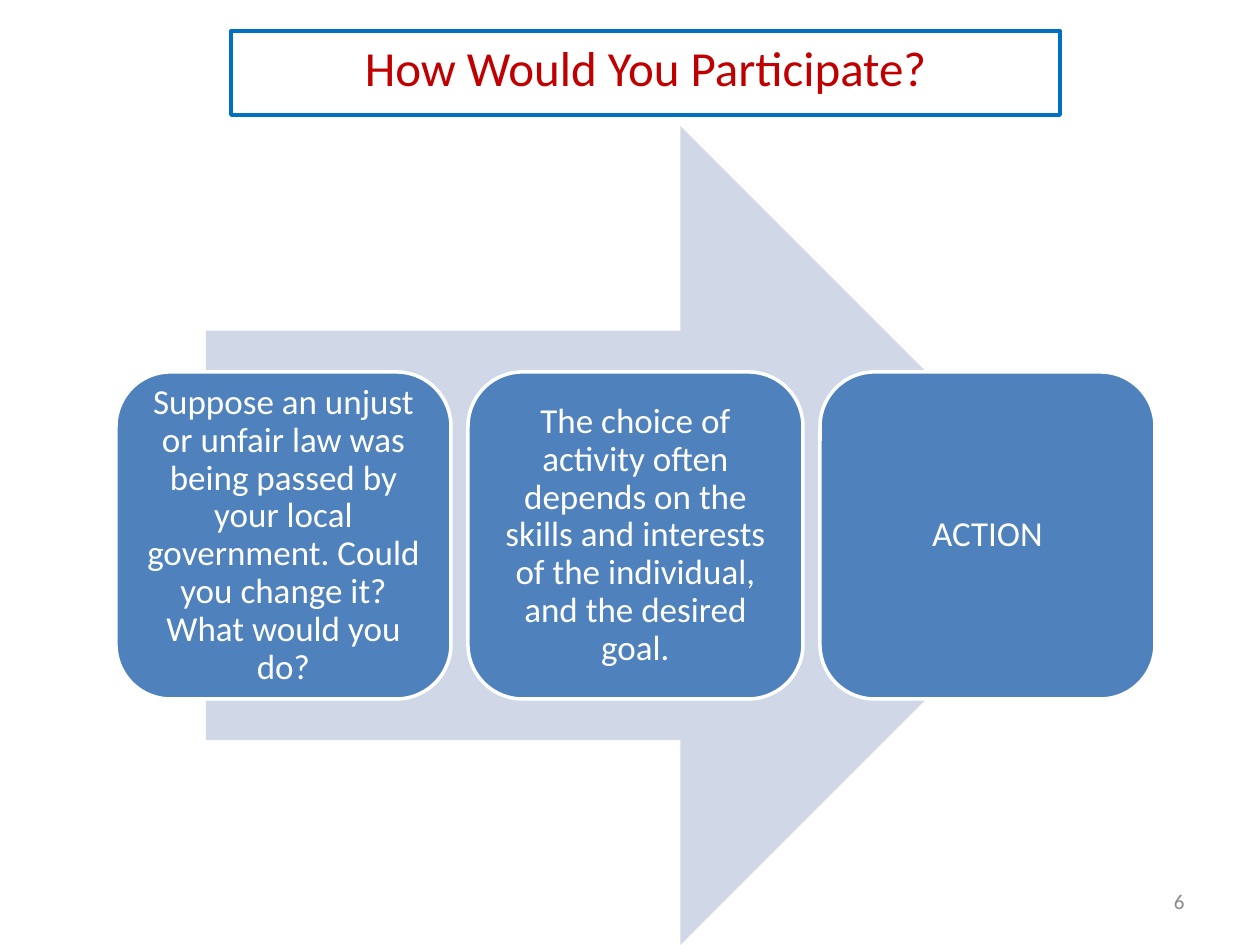
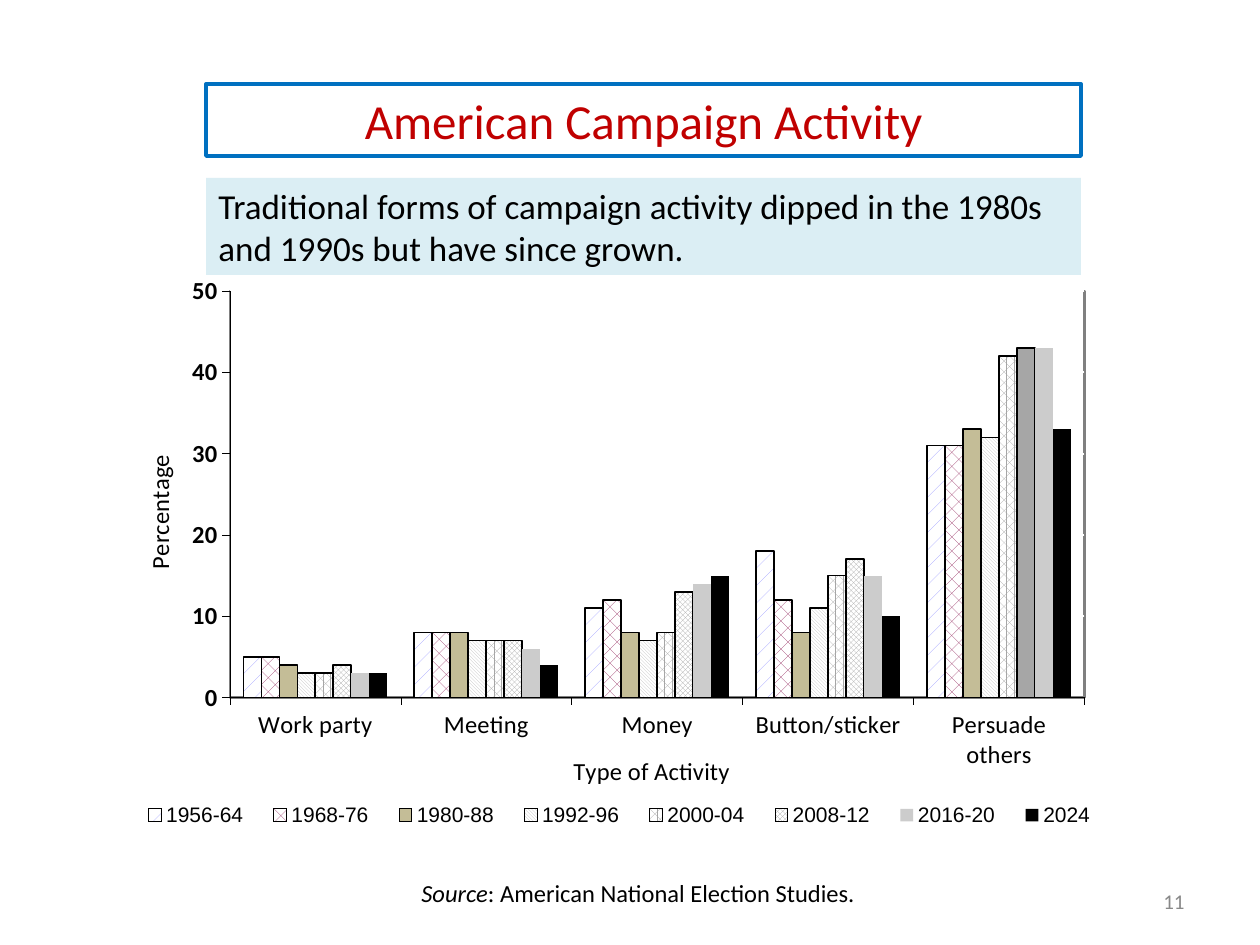
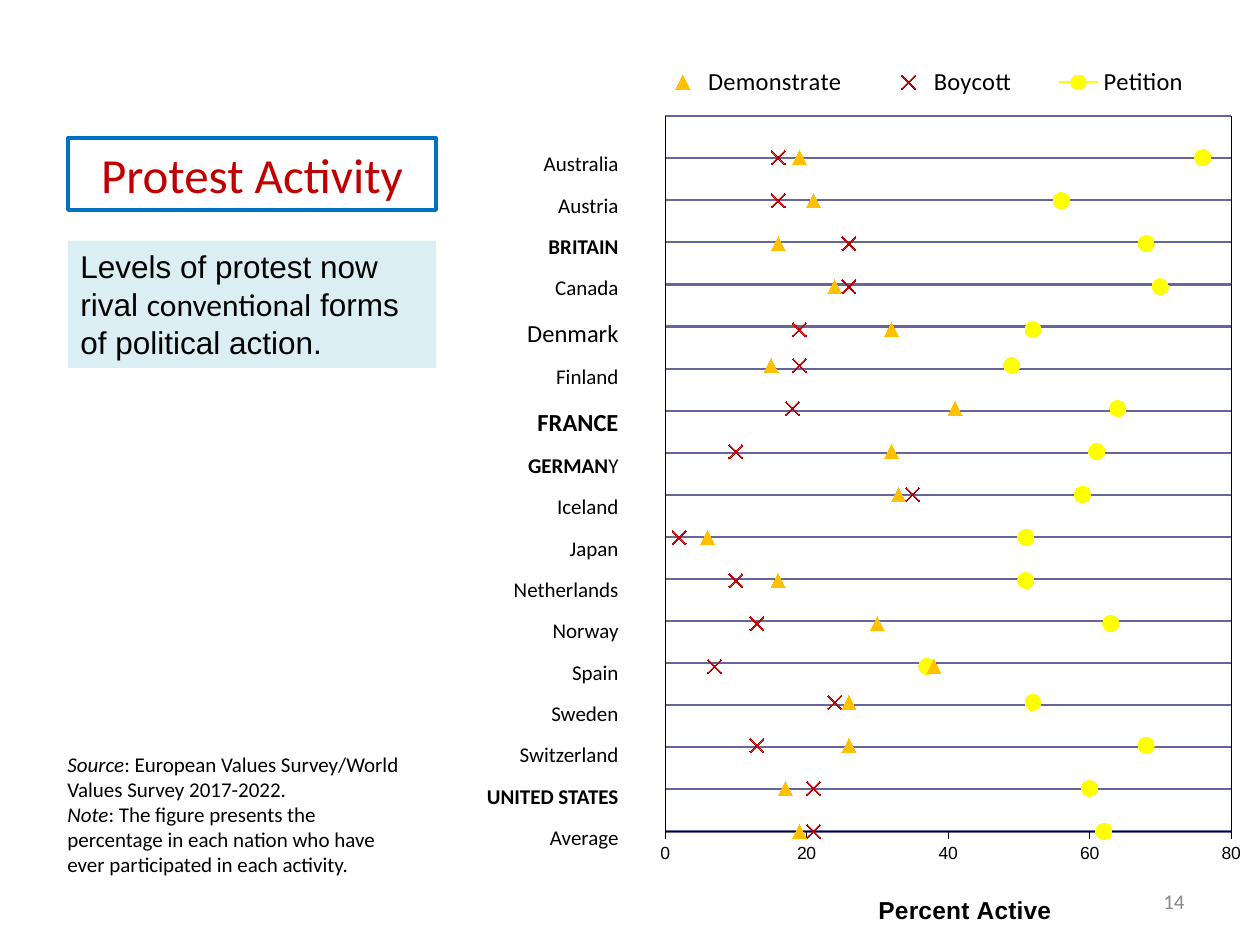
from pptx import Presentation
from pptx.chart.data import CategoryChartData, XyChartData
from pptx.dml.color import RGBColor
from pptx.enum.chart import XL_CHART_TYPE as ChartType, XL_LEGEND_POSITION as LegendPosition
from pptx.enum.chart import XL_MARKER_STYLE as Marker, XL_TICK_LABEL_POSITION as TickLabels
from pptx.enum.chart import XL_TICK_MARK as TickMark
from pptx.enum.dml import MSO_PATTERN as Pattern
from pptx.enum.shapes import MSO_SHAPE as Shape
from pptx.enum.text import MSO_ANCHOR as Anchor, MSO_AUTO_SIZE as AutoSize, PP_ALIGN as Align
from pptx.oxml import parse_xml
from pptx.oxml.ns import nsdecls, qn
from pptx.util import Emu, Inches, Pt

PX = Emu(7257)  # 126 px to the inch
RED = RGBColor(0xC0, 0x00, 0x00)
FRAME_BLUE = RGBColor(0x00, 0x70, 0xC0)
CARD_BLUE = RGBColor(0x4F, 0x81, 0xBD)
ARROW_BLUE = RGBColor(0xD0, 0xD8, 0xE8)
CALLOUT_BLUE = RGBColor(0xDB, 0xEE, 0xF4)
GRID_BLUE = RGBColor(0x66, 0x66, 0x99)
NUMBER_GRAY = RGBColor(0x89, 0x89, 0x89)
BORDER_GRAY = RGBColor(0x80, 0x80, 0x80)
LIGHT_GRAY = RGBColor(0xCC, 0xCC, 0xCC)
MID_GRAY = RGBColor(0xA6, 0xA6, 0xA6)
PALE_GRAY = RGBColor(0xBF, 0xBF, 0xBF)
LILAC = RGBColor(0x99, 0x99, 0xFF)
PLUM = RGBColor(0x99, 0x33, 0x66)
TAN = RGBColor(0xC4, 0xBD, 0x97)
ORANGE = RGBColor(0xFF, 0xC0, 0x00)
YELLOW = RGBColor(0xFF, 0xFF, 0x00)
BLACK = RGBColor(0x00, 0x00, 0x00)
WHITE = RGBColor(0xFF, 0xFF, 0xFF)


def add_text(slide, frame, paragraphs, size, color=BLACK, fill=None, align=Align.LEFT):
    """Add a text box; each paragraph is a list of (text, font settings) runs."""
    box = slide.shapes.add_textbox(*(length * PX for length in frame))
    if fill is not None:
        box.fill.solid()
        box.fill.fore_color.rgb = fill
    text_frame = box.text_frame
    text_frame.word_wrap = True
    for index, runs in enumerate(paragraphs):
        paragraph = text_frame.add_paragraph() if index else text_frame.paragraphs[0]
        paragraph.alignment = align
        paragraph.font.size = Pt(size)
        paragraph.font.name = "Calibri"
        paragraph.font.color.rgb = color
        for text, settings in runs:
            run = paragraph.add_run()
            run.text = text
            for name, value in settings.items():
                setattr(run.font, name, value)
    return text_frame


def place_part(chart, part, **fractions):
    """Fix a chart part at fractions (x, y, w, h) of the chart frame."""
    element = chart.element.xpath(part)[0]
    for old_layout in element.findall(qn("c:layout")):
        element.remove(old_layout)
    target = '<c:layoutTarget val="inner"/>' if part.endswith("plotArea") else ""
    modes = "".join(f'<c:{key}Mode val="edge"/>' for key in "xy")
    values = "".join(f'<c:{key} val="{value}"/>' for key, value in fractions.items())
    layout = parse_xml(
        f'<c:layout {nsdecls("c")}><c:manualLayout>{target}{modes}{values}'
        "</c:manualLayout></c:layout>")
    before = element.xpath("c:tx | c:legendPos")
    if before:
        before[0].addnext(layout)
    else:
        element.insert(0, layout)


presentation = Presentation()
presentation.slide_width, presentation.slide_height = Inches(10), Inches(7.5)

# Shared parts: framed title and slide number
slides = []
for title_text, title_frame, number in [
    ("How Would You Participate?", (231, 31, 829, 84), "6"),
    ("American Campaign Activity", (206, 84, 875, 72), "11"),
    ("Protest Activity", (68, 138, 368, 72), "14"),
]:
    slide = presentation.slides.add_slide(presentation.slide_layouts[5])
    title = slide.shapes.title
    title.left, title.top, title.width, title.height = (length * PX for length in title_frame)
    title.line.color.rgb = FRAME_BLUE
    title.line.width = Pt(2.25)
    title.text_frame.text = title_text
    title.text_frame.auto_size = AutoSize.NONE
    title.text_frame.vertical_anchor = Anchor.TOP
    paragraph = title.text_frame.paragraphs[0]
    paragraph.alignment = Align.CENTER
    paragraph.font.size = Pt(28)
    paragraph.font.name = "Calibri"
    paragraph.font.color.rgb = RED
    number_frame = add_text(slide, (903, 876, 294, 50), [[(number, {})]], 12,
                            NUMBER_GRAY, align=Align.RIGHT)
    number_frame.vertical_anchor = Anchor.MIDDLE
    slides.append(slide)
participate, campaign, protest = slides

# Participation: arrow behind three cards
arrow = participate.shapes.add_shape(
    Shape.RIGHT_ARROW, *(length * PX for length in (206, 126, 884, 819)))
arrow.shadow.inherit = False
arrow.fill.solid()
arrow.fill.fore_color.rgb = ARROW_BLUE
arrow.line.fill.background()

for index, text in enumerate([
    "Suppose an unjust or unfair law was being passed by your local government. "
    "Could you change it? What would you do?",
    "The choice of activity often depends on the skills and interests of the "
    "individual, and the desired goal.",
    "ACTION",
]):
    card = participate.shapes.add_shape(
        Shape.ROUNDED_RECTANGLE,
        *(length * PX for length in (116 + 352 * index, 372, 335, 327)))
    card.shadow.inherit = False
    card.fill.solid()
    card.fill.fore_color.rgb = CARD_BLUE
    card.line.color.rgb = WHITE
    card.line.width = Pt(2)
    text_frame = card.text_frame
    text_frame.word_wrap = True
    text_frame.vertical_anchor = Anchor.MIDDLE
    text_frame.margin_left = text_frame.margin_right = 10 * PX
    text_frame.margin_top = text_frame.margin_bottom = 10 * PX
    text_frame.text = text
    paragraph = text_frame.paragraphs[0]
    paragraph.alignment = Align.CENTER
    paragraph.line_spacing = 0.9
    paragraph.font.size = Pt(20)
    paragraph.font.name = "Calibri"
    paragraph.font.color.rgb = WHITE

# Campaign activity: callout and source
add_text(campaign, (206, 178, 875, 97), [[
    ("Traditional forms of campaign activity dipped in the 1980s and 1990s "
     "but have since grown.", {})]], 20, fill=CALLOUT_BLUE)
add_text(campaign, (409, 872, 651, 43), [[
    ("Source", {"italic": True}), (": American National Election Studies.", {})]], 14)

# Campaign activity: name, values, pattern, colour, outlined
periods = [
    ("1956-64", (5, 8, 11, 18, 31), Pattern.PERCENT_5, LILAC, True),
    ("1968-76", (5, 8, 12, 12, 31), Pattern.PERCENT_25, PLUM, True),
    ("1980-88", (4, 8, 8, 8, 33), None, TAN, True),
    ("1992-96", (3, 7, 7, 11, 32), Pattern.DARK_DOWNWARD_DIAGONAL, PALE_GRAY, True),
    ("2000-04", (3, 7, 8, 15, 42), Pattern.PERCENT_60, MID_GRAY, True),
    ("2008-12", (4, 7, 13, 17, 43), Pattern.TRELLIS, MID_GRAY, True),
    ("2016-20", (3, 6, 14, 15, 43), None, LIGHT_GRAY, False),
    ("2024", (3, 4, 15, 10, 33), None, BLACK, False),
]
campaign_data = CategoryChartData()
campaign_data.categories = ["Work party", "Meeting", "Money", "Button/sticker", "Persuade others"]
for name, values, *_ in periods:
    campaign_data.add_series(name, values)
campaign_chart = campaign.shapes.add_chart(
    ChartType.COLUMN_CLUSTERED, *(length * PX for length in (125, 258, 1009, 614)),
    campaign_data).chart
plot = campaign_chart.plots[0]
plot.gap_width = 150
plot.overlap = 0
plot.vary_by_categories = False
for series, (_, _, pattern, color, outlined) in zip(plot.series, periods):
    fill = series.format.fill
    if pattern is None:
        fill.solid()
    else:
        fill.patterned()
        fill.pattern = pattern
        fill.back_color.rgb = WHITE
    fill.fore_color.rgb = color
    if outlined:
        series.format.line.color.rgb = BLACK
        series.format.line.width = Pt(0.98)
persuade_2008 = plot.series[5].points[4].format
persuade_2008.fill.solid()
persuade_2008.fill.fore_color.rgb = MID_GRAY
persuade_2008.line.color.rgb = BLACK
persuade_2008.line.width = Pt(0.98)
campaign_chart.value_axis.minimum_scale = 0
campaign_chart.value_axis.maximum_scale = 50
campaign_chart.value_axis.major_unit = 10

# Protest activity: bold label part, plain label part, label size, percentages
nations = [
    ("", "Australia", 12, (19, 16, 76)),
    ("", "Austria", 12, (21, 16, 56)),
    ("BRITAIN", "", 12, (16, 26, 68)),
    ("", "Canada", 12, (24, 26, 70)),
    ("", "Denmark", 14, (32, 19, 52)),
    ("", "Finland", 12, (15, 19, 49)),
    ("FRANCE", "", 14, (41, 18, 64)),
    ("GERMAN", "Y", 12, (32, 10, 61)),
    ("", "Iceland", 12, (33, 35, 59)),
    ("", "Japan", 12, (6, 2, 51)),
    ("", "Netherlands", 12, (16, 10, 51)),
    ("", "Norway", 12, (30, 13, 63)),
    ("", "Spain", 12, (38, 7, 37)),
    ("", "Sweden", 12, (26, 24, 52)),
    ("", "Switzerland", 12, (26, 13, 68)),
    ("UNITED STATES", "", 12, (17, 21, 60)),
    ("", "Average", 12, (19, 21, 62)),
]
activities = [
    ("Demonstrate", Marker.TRIANGLE, 8, ORANGE),
    ("Boycott", Marker.X, 8, RED),
    ("Petition", Marker.CIRCLE, 9, YELLOW),
]
bottom_row, row_step = 6, 5.87
rows = [(round(bottom_row + row_step * index), percentages)
        for index, (*_, percentages) in enumerate(reversed(nations))]
rows = rows[1:] + rows[:1]  # the average comes last

# The activities share one x column; each leaves the others' heights blank
protest_data = XyChartData()
for own_column, (name, *_) in enumerate(activities):
    series_data = protest_data.add_series(name)
    for height, percentages in rows:
        for column, percentage in enumerate(percentages):
            series_data.add_data_point(percentage, height if column == own_column else None)
protest_chart = protest.shapes.add_chart(
    ChartType.XY_SCATTER, *(length * PX for length in (365, 60, 893, 892)),
    protest_data).chart
for blank in protest_chart.element.xpath('.//c:yVal//c:pt[c:v="None" or c:v=""]'):
    blank.getparent().remove(blank)
protest_chart.plots[0].vary_by_categories = False
for series, (name, style, size, color) in zip(protest_chart.plots[0].series, activities):
    if name == "Petition":
        series.format.line.color.rgb = color
        series.format.line.width = Pt(1)
    else:
        series.format.line.fill.background()
    series.marker.style = style
    series.marker.size = size
    series.marker.format.fill.solid()
    series.marker.format.fill.fore_color.rgb = color
    series.marker.format.line.color.rgb = color
percent_axis, row_axis = protest_chart.category_axis, protest_chart.value_axis
percent_axis.minimum_scale, percent_axis.maximum_scale = 0, 80
percent_axis.major_unit = 20
percent_axis.has_major_gridlines = False
row_axis.minimum_scale = bottom_row
row_axis.maximum_scale = round(bottom_row + row_step * len(nations), 2)
row_axis.major_unit = row_step

# Both charts: fonts, axes, gridlines, legend and plot border
for (chart, axis_font, axis_size, legend_font, legend_size,
     grid, grid_width, border, border_width) in [
    (campaign_chart, "Calibri", 14, "Arial", 12, WHITE, 0.98, BORDER_GRAY, 1.5),
    (protest_chart, "Arial", 10, "Calibri", 14, GRID_BLUE, 1.25, BLACK, 0.25),
]:
    chart.has_title = False
    chart.font.name = "Arial"
    chart.font.size = Pt(axis_size)
    chart.font.color.rgb = BLACK
    chart.has_legend = True
    chart.legend.position = LegendPosition.TOP
    chart.legend.include_in_layout = False
    chart.legend.font.name = legend_font
    chart.legend.font.size = Pt(legend_size)
    chart.legend.font.bold = False
    chart.legend.font.color.rgb = BLACK
    for axis in (chart.category_axis, chart.value_axis):
        axis.major_tick_mark = TickMark.OUTSIDE
        axis.minor_tick_mark = TickMark.NONE
        axis.format.line.color.rgb = BLACK
        axis.format.line.width = Pt(0.25)
        axis.tick_labels.font.name = axis_font
        axis.tick_labels.font.size = Pt(axis_size)
        axis.tick_labels.font.bold = False
        axis.tick_labels.font.color.rgb = BLACK
    chart.value_axis.has_major_gridlines = True
    chart.value_axis.major_gridlines.format.line.color.rgb = grid
    chart.value_axis.major_gridlines.format.line.width = Pt(grid_width)
    chart.element.xpath("c:chart/c:plotArea")[0].append(parse_xml(
        f'<c:spPr {nsdecls("c", "a")}>'
        f'<a:solidFill><a:srgbClr val="{WHITE}"/></a:solidFill>'
        f'<a:ln w="{Pt(border_width)}"><a:solidFill><a:srgbClr val="{border}"/></a:solidFill>'
        "</a:ln></c:spPr>"))
campaign_chart.value_axis.tick_labels.font.bold = True
row_axis.major_tick_mark = TickMark.NONE
row_axis.tick_label_position = TickLabels.NONE

for axis, text, font_name, bold in [
    (campaign_chart.category_axis, "Type of Activity", "Calibri", False),
    (campaign_chart.value_axis, "Percentage", "Calibri", False),
    (percent_axis, "Percent Active", "Arial", True),
]:
    axis.axis_title.text_frame.text = text
    paragraph = axis.axis_title.text_frame.paragraphs[0]
    paragraph.font.name = font_name
    paragraph.font.size = Pt(14)
    paragraph.font.bold = bold
    paragraph.font.color.rgb = BLACK
percentage_body = campaign_chart.element.xpath("c:chart/c:plotArea/c:valAx/c:title//a:bodyPr")[0]
percentage_body.set("rot", "-5400000")
percentage_body.set("vert", "horz")

# Chart layouts
plot_part, legend_part = "c:chart/c:plotArea", "c:chart/c:legend"
place_part(campaign_chart, plot_part, x=0.104, y=0.054, w=0.847, h=0.662)
place_part(campaign_chart, legend_part, x=0, y=0.88, w=0.98, h=0.055)
place_part(campaign_chart, plot_part + "/c:catAx/c:title", x=0.44, y=0.8)
place_part(campaign_chart, plot_part + "/c:valAx/c:title", x=0.013, y=0.313)
place_part(protest_chart, plot_part, x=0.336, y=0.063, w=0.634, h=0.802)
place_part(protest_chart, legend_part, x=0.29, y=0, w=0.67, h=0.05)
place_part(protest_chart, plot_part + "/c:valAx[1]/c:title", x=0.57, y=0.93)

# Protest activity: nation labels beside the rows, with the title in front
labels = add_text(
    protest, (432, 132, 199, 760),
    [[(text, {"bold": bold, "size": Pt(size)})
      for text, bold in ((bold_part, True), (plain_part, False)) if text]
     for bold_part, plain_part, size, _ in nations],
    12, fill=WHITE, align=Align.RIGHT)
for paragraph in labels.paragraphs:
    paragraph.line_spacing = 1.5
    paragraph.space_after = Pt(2)
protest_title = protest.shapes.title.element
protest_title.getparent().append(protest_title)

# Protest activity: callout and notes
add_text(protest, (68, 241, 368, 127), [[
    ("Levels of protest now rival ", {"name": "Arial"}),
    ("conventional", {}),
    (" forms of political action.", {"name": "Arial"})]], 18, fill=CALLOUT_BLUE)
add_text(protest, (55, 745, 368, 140), [
    [("Source", {"italic": True}),
     (": European Values Survey/World Values Survey 2017-2022.", {})],
    [("Note", {"italic": True}),
     (": The figure presents the percentage in each nation who have ever "
      "participated in each activity.", {})],
], 12)

presentation.save("out.pptx")
